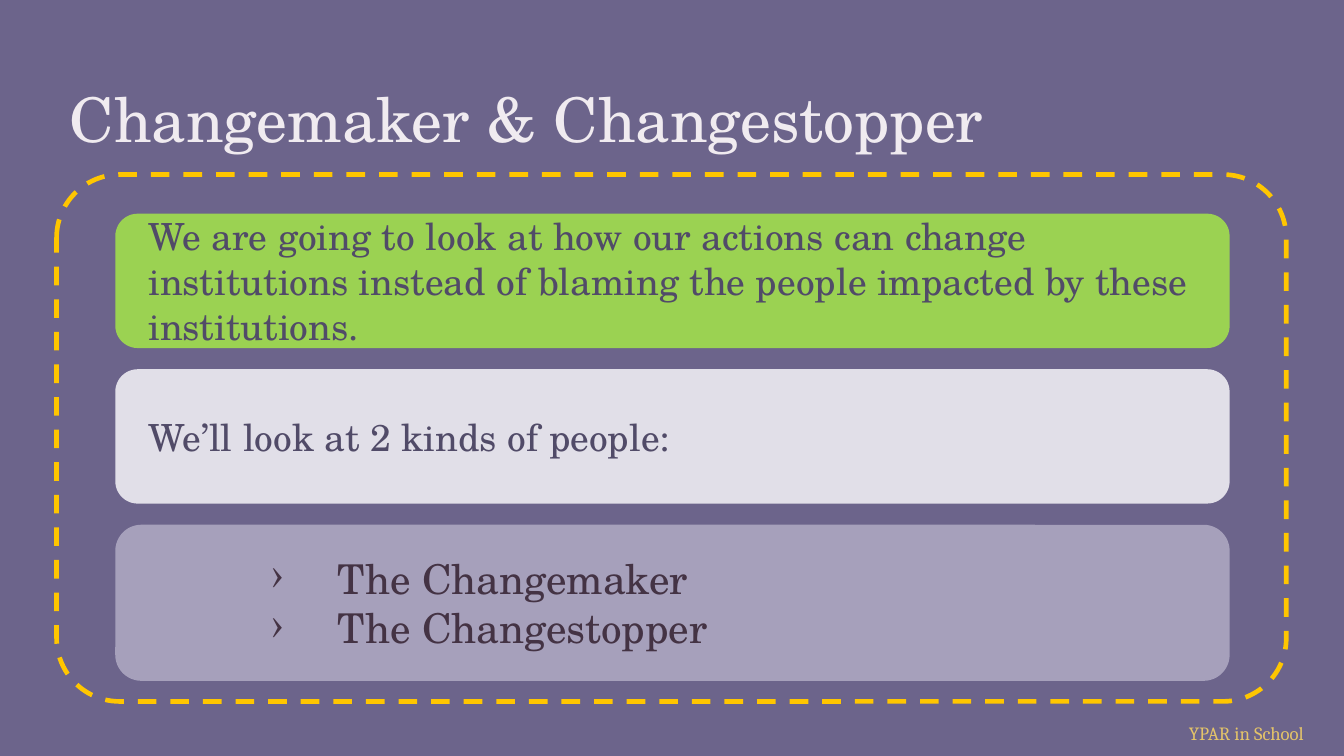
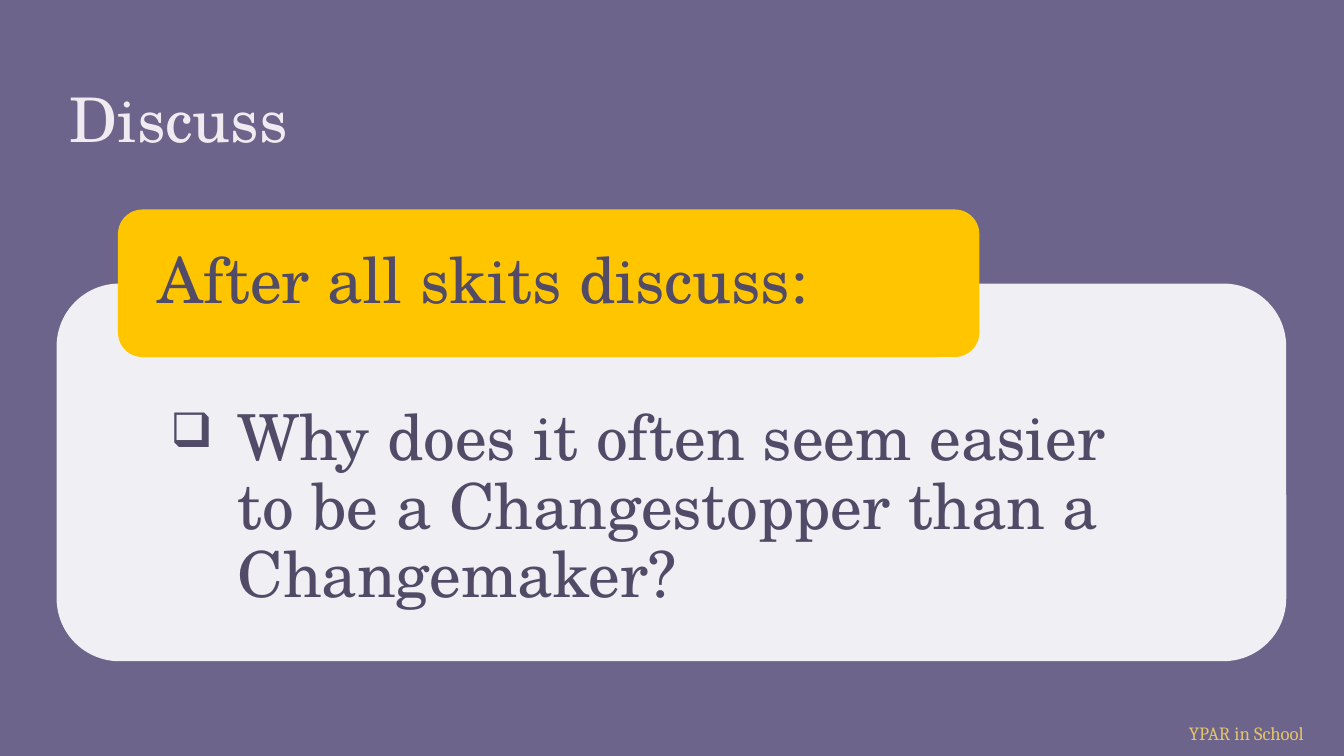
from lxml import etree
from pptx import Presentation
from pptx.dml.color import RGBColor
from pptx.enum import dml, shapes, text
from pptx.oxml.ns import qn
from pptx.util import Cm, Pt

# Shared style
SERIF, SMALL = "TeX Gyre Schola", "Cambria"
INK, PLUM, PALE = "514B68", "443344", "F0EBF0"
BACK, GOLD, SAND = "6C648B", "FFC600", "E4C469"
LIME, MIST, LILAC, WHITE = "9BD252", "E1DFE8", "A6A0BB", "FFFFFF"
WIDE, HIGH = 25.4, 14.29
LEFT, SPAN = 1.07, 23.24


def color(tone):
    return RGBColor.from_string(tone)


def place(shape, box):
    shape.left, shape.top, shape.width, shape.height = map(Cm, box)


def inset(box, gap):
    x, y, w, h = box
    return x + gap, y + gap, w - 2 * gap, h - 2 * gap


def style(para, size, tone, face=SERIF):
    para.alignment = text.PP_ALIGN.LEFT
    font = para.font
    font.name, font.size = face, Pt(size)
    font.color.rgb = color(tone)


def indent(para, left, hang=0, mark=None, scale=None):
    """Set the indents in cm and, if given, a bullet mark."""
    props = para._p.get_or_add_pPr()
    props.set("marL", str(Cm(left)))
    props.set("indent", str(Cm(-hang)))
    if scale:
        etree.SubElement(props, qn("a:buSzPct")).set("val", str(scale * 1000))
    if mark:
        etree.SubElement(props, qn("a:buChar")).set("char", mark)


def round_box(slide, box, fill=None, alpha=None):
    shape = slide.shapes.add_shape(
        shapes.MSO_SHAPE.ROUNDED_RECTANGLE, *map(Cm, box))
    shape.shadow.inherit = False
    shape.line.fill.background()
    if fill:
        shape.fill.solid()
        shape.fill.fore_color.rgb = color(fill)
    else:
        shape.fill.background()
    if alpha:
        tone = shape._element.spPr.find(".//" + qn("a:srgbClr"))
        etree.SubElement(tone, qn("a:alpha")).set("val", str(alpha * 1000))
    return shape


def text_box(slide, box, words, pads):
    frame = slide.shapes.add_textbox(*map(Cm, box)).text_frame
    frame.word_wrap = True
    (frame.margin_left, frame.margin_top,
     frame.margin_right, frame.margin_bottom) = map(Cm, pads)
    frame.text = words
    return frame


def new_slide(deck, words):
    """Add a slide with its title and footer."""
    slide = deck.slides.add_slide(deck.slide_layouts[5])
    title = slide.shapes.title
    place(title, (LEFT, 1.27, SPAN, 1.9))
    frame = title.text_frame
    frame.text = words
    frame.auto_size = text.MSO_AUTO_SIZE.NONE
    frame.vertical_anchor = text.MSO_ANCHOR.BOTTOM
    frame.margin_left = frame.margin_right = Cm(0.25)
    frame.margin_top = frame.margin_bottom = Cm(0.25)
    style(frame.paragraphs[0], 33, PALE)

    foot = text_box(slide, (22.22, 13.51, 7.11, 0.69), "YPAR in School",
                    (0.25, 0.13, 0.25, 0.13))
    style(foot.paragraphs[0], 10, SAND, SMALL)
    return slide


def card(slide, box, fill, lines, size, tone, **dent):
    shape = round_box(slide, box, fill)
    frame = shape.text_frame
    frame.word_wrap = True
    frame.vertical_anchor = text.MSO_ANCHOR.MIDDLE
    frame.text = "\n".join(lines)
    for para in frame.paragraphs:
        indent(para, **dent)
        style(para, size, tone)


def card_stack(slide, box):
    """Dashed frame around a column of cards."""
    x, y, w, h = box
    plain = dict(size=20, tone=INK, left=0.25)
    listed = dict(size=22, tone=PLUM, left=3.81, hang=1.27, mark="›")
    cards = [
        (2.54, LIME, ["We are going to look at how our actions can change "
                      "institutions instead of blaming the people impacted "
                      "by these institutions."], plain),
        (2.54, MIST, ["We’ll look at 2 kinds of people:"], plain),
        (2.95, LILAC, ["The Changemaker", "The Changestopper"], listed),
    ]
    top = y + 0.74
    for tall, fill, lines, look in cards:
        card(slide, (x + 1.11, top, w - 2.18, tall), fill, lines, **look)
        top += tall + 0.4

    border = round_box(slide, box)
    border.adjustments[0] = 0.12
    border.line.color.rgb = color(GOLD)
    border.line.width = Pt(2.5)
    border.line.dash_style = dml.MSO_LINE.DASH


def prompt(slide, box):
    """Question panel with a label across its top edge."""
    x, y, w, h = box
    round_box(slide, box, WHITE, alpha=90)
    body = text_box(slide, inset(box, 0.35),
                    "Why does it often seem easier to be a Changestopper "
                    "than a Changemaker?", (1.8, 1.96, 1.8, 0.66))
    ask = body.paragraphs[0]
    indent(ask, 1.27, 1.27, "❑", 75)

    tab = (x + 1.16, y - 1.4, 16.28, 2.79)
    round_box(slide, tab, GOLD)
    label = text_box(slide, inset(tab, 0.14), "After all skits discuss:",
                     (0.61, 0, 0.61, 0))
    label.vertical_anchor = text.MSO_ANCHOR.MIDDLE
    for para in (ask, label.paragraphs[0]):
        para.line_spacing = 0.9
        style(para, 34, INK)


def main():
    deck = Presentation()
    deck.slide_width, deck.slide_height = Cm(WIDE), Cm(HIGH)
    back = deck.slide_master.background.fill
    back.solid()
    back.fore_color.rgb = color(BACK)

    card_stack(new_slide(deck, "Changemaker & Changestopper"),
               (LEFT, 3.3, SPAN, 9.96))
    prompt(new_slide(deck, "Discuss"), (LEFT, 5.36, SPAN, 7.14))
    deck.save("out.pptx")


if __name__ == "__main__":
    main()
